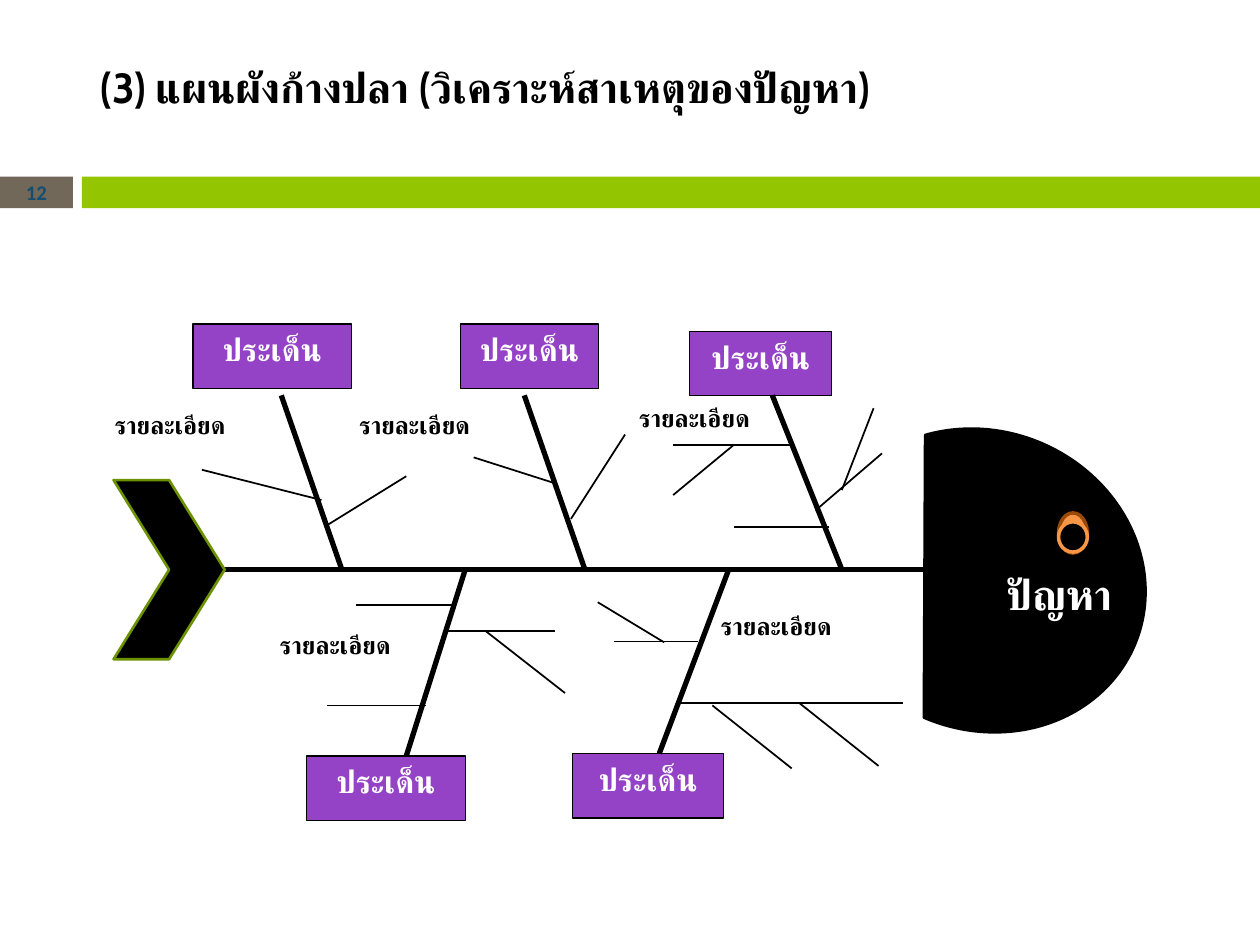
from collections import namedtuple
from lxml.etree import SubElement
from pptx import Presentation
from pptx.dml.color import RGBColor
from pptx.enum.shapes import MSO_CONNECTOR as Line, MSO_SHAPE as Shape
from pptx.enum.text import MSO_ANCHOR as Anchor, PP_ALIGN as Align
from pptx.oxml.ns import qn
from pptx.util import Cm, Pt

Box = namedtuple("Box", "left top width height")
Bone = namedtuple("Bone", "foot tip issue detail twigs")

BLACK, WHITE, GREEN, PURPLE = "000000", "FFFFFF", "94C600", "9442C6"
ORANGE, BROWN, GREY, BLUE = "F79646", "984807", "71685A", "184E6D"
TITLE_FORMAT = {"name": "Cabin", "size": Pt(24), "bold": True}
ISSUE_FORMAT = {"name": "Cabin", "size": Pt(18), "bold": True}
DETAIL_FORMAT = {"name": "Cabin", "size": Pt(14), "bold": True}
NUMBER_FORMAT = {"name": "Calibri", "size": Pt(11.9), "bold": True}

SPINE = 4.95
BONES = [
    Bone(4.6, (-1.22, -3.51), Box(-3, -4.95, 3.2, 1.3), (-4.83, -3.33),
         [(-0.41, -1.4, -2.82, -2.01), (-0.3, -0.89, 1.3, -1.88)]),
    Bone(9.5, (-1.22, -3.51), Box(-2.51, -4.95, 2.79, 1.3), (-4.8, -3.33),
         [(-0.64, -1.75, -2.24, -2.26), (0.81, -2.72, -0.28, -1.02)]),
    Bone(14.68, (-1.4, -3.51), Box(-3.07, -4.8, 2.87, 1.3), (-4.34, -3.48),
         [(-0.99, -2.51, -3.4, -2.51), (-2.18, -2.51, -3.4, -1.5),
          (-0.53, -1.19, 0.81, -2.34), (-0.25, -0.86, -2.18, -0.86),
          (0, -1.6, 0.64, -3.25)]),
    Bone(7.09, (-1.19, 3.76), Box(-3.2, 3.76, 3.2, 1.3), (-3.99, 1.09),
         [(-0.41, 1.24, 1.8, 1.24), (0.41, 1.24, 2.01, 2.49),
          (-0.79, 2.74, -2.79, 2.74), (-0.2, 0.71, -2.21, 0.71)]),
    Bone(12.4, (-1.4, 3.71), Box(-3.15, 3.71, 3.05, 1.3), (-0.41, 0.71),
         [(-0.61, 1.45, -2.31, 1.45), (-1.02, 2.69, 3.51, 2.69),
          (-0.33, 2.74, 1.27, 4.01), (1.42, 2.69, 3.02, 3.96),
          (-2.64, 0.66, -1.3, 1.47)]),
]


def colour(value):
    return RGBColor.from_string(value)


def inside(box, left, top, width, height):
    return Box(box.left + left, box.top + top, width, height)


def write(shape, text, font_format, ink, align=Align.CENTER, anchor=Anchor.TOP):
    frame = shape.text_frame
    for name, value in {"word_wrap": True, "vertical_anchor": anchor}.items():
        setattr(frame, name, value)
    para = frame.paragraphs[0]
    para.alignment = align
    span = para.add_run()
    span.text = text
    for name, value in font_format.items():
        setattr(span.font, name, value)
    span.font.color.rgb = colour(ink)
    script_font = SubElement(span.font._element, qn("a:cs"))
    script_font.set("typeface", font_format["name"])


def add_text(page, box, *content, **layout):
    shape = page.shapes.add_textbox(*map(Cm, box))
    write(shape, *content, **layout)


def add_block(page, kind, box, fill, outline=None, weight=1.5):
    shape = page.shapes.add_shape(kind, *map(Cm, box))
    shape.shadow.inherit = False
    shape.fill.solid()
    shape.fill.fore_color.rgb = colour(fill)
    if outline:
        shape.line.color.rgb = colour(outline)
        shape.line.width = Pt(weight)
    else:
        shape.line.fill.background()
    return shape


def add_line(page, box, ends, weight):
    x1, y1, x2, y2 = ends
    points = (box.left + x1, box.top + y1, box.left + x2, box.top + y2)
    line = page.shapes.add_connector(Line.STRAIGHT, *map(Cm, points))
    line.line.color.rgb = colour(BLACK)
    line.line.width = Pt(weight)
    SubElement(line._element.spPr, qn("a:effectLst"))


def add_heading(page, box):
    title = page.shapes.title
    for name, value in inside(box, 0.51, 1.12, 24.61, 1.57)._asdict().items():
        setattr(title, name, Cm(value))
    title.text_frame.margin_left = Cm(1.52)
    write(title, "(3) แผนผังก้างปลา (วิเคราะห์สาเหตุของปัญหา)",
          TITLE_FORMAT, BLACK, align=Align.LEFT)
    number = inside(box, 0, 3.56, 1.47, 0.64)
    add_block(page, Shape.RECTANGLE, number, GREY)
    add_block(page, Shape.RECTANGLE,
              inside(box, 1.65, 3.56, box.width - 1.65, 0.64), GREEN)
    add_text(page, number, "12", NUMBER_FORMAT, BLUE, anchor=Anchor.MIDDLE)


def add_bone(page, box, bone):
    add_block_with_issue = add_block(
        page, Shape.RECTANGLE, inside(box, *bone.issue), PURPLE, BLACK, 0.75)
    write(add_block_with_issue, "ประเด็น", ISSUE_FORMAT, WHITE)
    add_line(page, box, (*bone.tip, 0, 0), 3)
    for twig in bone.twigs:
        add_line(page, box, twig, 1)
    add_text(page, inside(box, *bone.detail, 3.2, 1.07), "รายละเอียด",
             DETAIL_FORMAT, BLACK, align=Align.LEFT)


def add_head(page, box):
    face = add_block(page, Shape.CHORD, box, BLACK, BLACK)
    face.rotation = 203.3
    add_block(page, Shape.OVAL, inside(box, 4.85, 1.65, 0.58, 0.81), ORANGE, BROWN, 2)
    add_block(page, Shape.OVAL, inside(box, 4.85, 1.83, 0.58, 0.61), BLACK, ORANGE, 2)
    add_text(page, inside(box, 2.57, 2.64, 4.6, 1.6), "ปัญหา", TITLE_FORMAT, WHITE)


def add_fish(page, box):
    add_line(page, box, (18.11, SPINE, 1.12, SPINE), 3)
    for bone in BONES:
        add_bone(page, inside(box, bone.foot, SPINE, 0, 0), bone)
    add_head(page, inside(box, 14.2, 2.16, 6.65, 6.02))
    add_block(page, Shape.CHEVRON, inside(box, 0, 3.15, 2.24, 3.61), BLACK, "6D9200")


def main():
    deck = Presentation()
    deck.slide_width, deck.slide_height = Cm(25.4), Cm(19.05)
    page = deck.slides.add_slide(deck.slide_layouts[5])
    add_heading(page, Box(0, 0, 25.4, 4.2))
    add_fish(page, Box(2.29, 6.53, 20.85, 10.01))
    deck.save("out.pptx")


if __name__ == "__main__":
    main()
